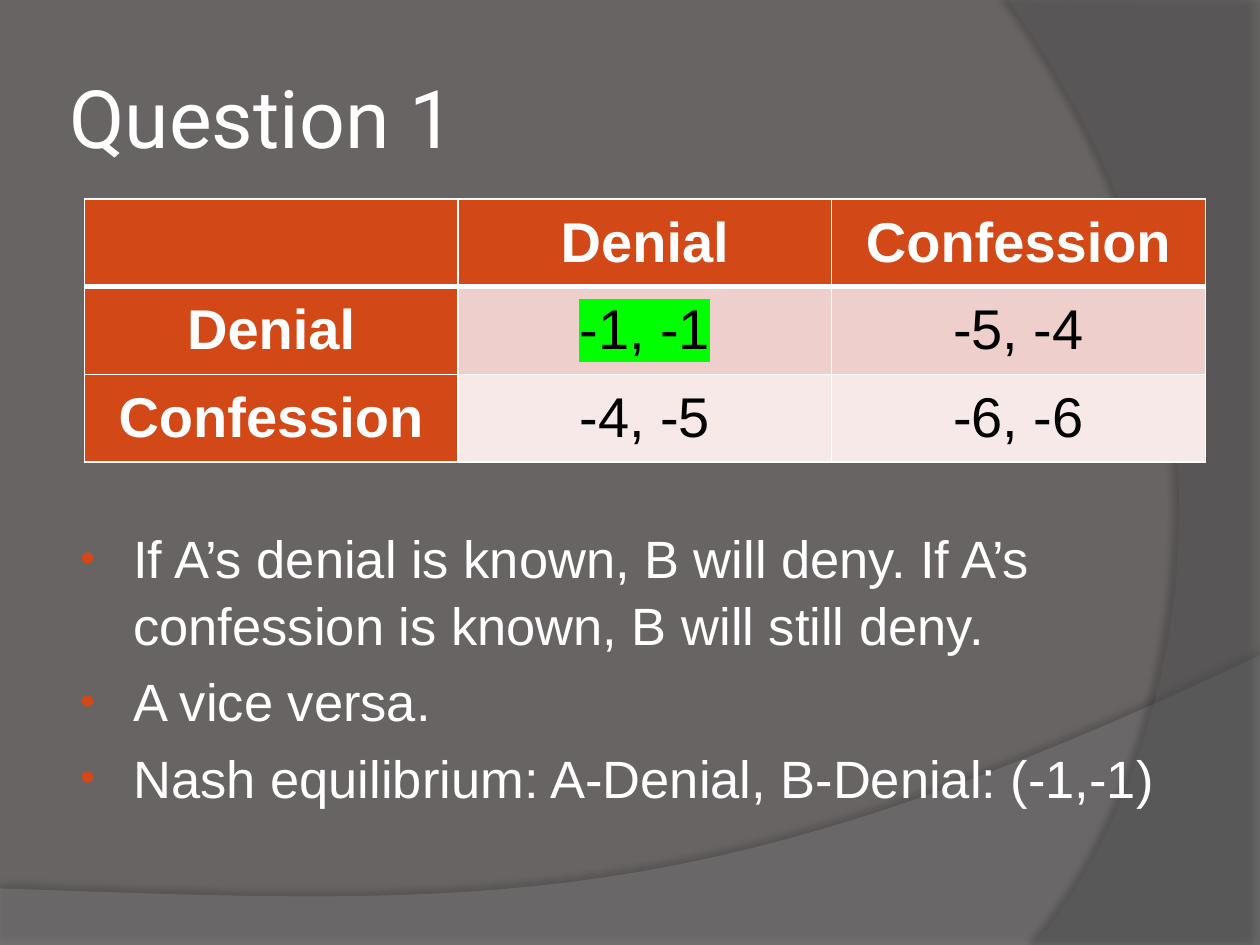
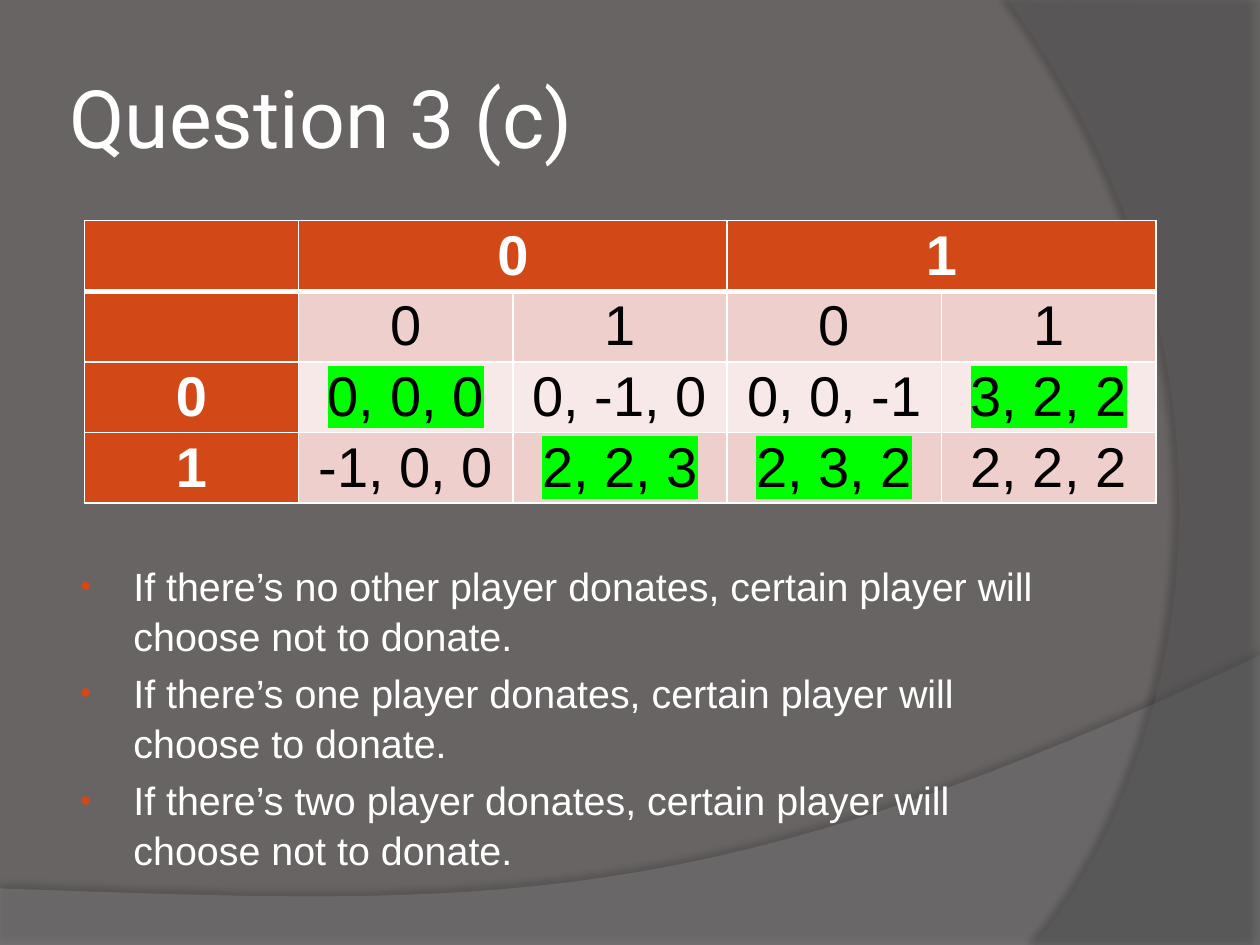
from lxml import etree
from pptx import Presentation
from pptx import util as u
from pptx.dml.color import RGBColor
from pptx.enum import text
from pptx.oxml.ns import qn

WHITE, BLACK, GREY = "FFFFFF", "000000", "696464"
ORANGE, GREEN = "D34817", "00FF00"
BANDS = ["F7E9E8", "EFCFCC"]
SLIDE_BOX = (0, 0, 25.4, 19.05)
TITLE_BOX = (1.27, 0.76, 20.75, 3.18)
CURVE_STEPS = 32


def rgb(hex_code):
    return RGBColor.from_string(hex_code)


def add_xml(parent, tag, **attrs):
    return etree.SubElement(parent, qn(tag), {k: str(v) for k, v in attrs.items()})


def place(sp, box):
    sp.left, sp.top, sp.width, sp.height = (u.Cm(v) for v in box)


def write(p, words, size=32, font="Arial", color=WHITE, bold=False,
          align=text.PP_ALIGN.LEFT, highlight=None):
    p.alignment = align
    r = p.add_run()
    r.text = words
    r.font.size, r.font.name, r.font.bold = u.Pt(size), font, bold
    r.font.color.rgb = rgb(color)
    if highlight:
        mark = etree.Element(qn("a:highlight"))
        add_xml(mark, "a:srgbClr", val=highlight)
        r.font._element.find(qn("a:solidFill")).addnext(mark)


def bezier(p0, p1, p2, p3):
    points = []
    for i in range(1, CURVE_STEPS + 1):
        t = i / CURVE_STEPS
        weights = ((1 - t) ** 3, 3 * t * (1 - t) ** 2, 3 * t * t * (1 - t), t ** 3)
        points.append(tuple(sum(w * v for w, v in zip(weights, axis))
                            for axis in zip(p0, p1, p2, p3)))
    return points


def swoosh(s, box, outline, color, opacity, shadow_opacity, distance, direction):
    left, top = box[:2]
    points = [(u.Cm(left + x), u.Cm(top + y)) for x, y in outline]
    builder = s.shapes.build_freeform(*points[0])
    builder.add_line_segments(points[1:], close=True)
    sp = builder.convert_to_shape()
    sp.line.fill.background()
    sp.fill.solid()
    sp.fill.fore_color.rgb = rgb(color)
    sp.shadow.inherit = False
    props = sp._element.spPr
    add_xml(props.find(qn("a:solidFill"))[0], "a:alpha", val=opacity * 1000)
    shadow = add_xml(props.find(qn("a:effectLst")), "a:outerShdw", blurRad=u.Pt(4),
                     dist=u.Pt(distance), dir=direction * 60000, rotWithShape=0)
    tint = add_xml(shadow, "a:srgbClr", val=BLACK)
    add_xml(tint, "a:alpha", val=shadow_opacity * 1000)


def backdrop(s, box):
    width, height = box[2:]
    wave = [(0, 17.91), (0, height), (width, height), (width, 13.21)]
    wave += bezier(wave[-1], (14.2, 18.52), (9.93, 18.26), wave[0])
    swoosh(s, box, wave, "7F7F7F", 45, 35, 3.5, 270)
    side = [(width, 0.05), (width, height), (20.85, height)]
    side += bezier(side[-1], (23.75, 15.72), (25.86, 7.62), (20.32, 0))
    swoosh(s, box, side, "5E5E5E", 40, 45, 4, 180)


def title(s, box, words):
    sp = s.shapes.title
    place(sp, box)
    tf = sp.text_frame
    tf.word_wrap = True
    tf.auto_size = text.MSO_AUTO_SIZE.NONE
    tf.vertical_anchor = text.MSO_ANCHOR.MIDDLE
    tf.margin_left = tf.margin_right = tf.margin_top = tf.margin_bottom = u.Cm(0.13)
    write(tf.paragraphs[0], words, size=46, font="Roboto")


def bullets(s, box, lines, size):
    tf = s.shapes.add_textbox(*(u.Cm(v) for v in box)).text_frame
    tf.word_wrap = True
    tf.margin_top = tf.margin_bottom = 0
    for i, line in enumerate(lines):
        p = tf.add_paragraph() if i else tf.paragraphs[0]
        p.line_spacing = 1.05
        p.space_after = u.Pt(size * 0.2)
        write(p, line, size=size)
        props = p._p.get_or_add_pPr()
        props.set("marL", str(u.Cm(1.17)))
        props.set("indent", str(u.Cm(-1.07)))
        add_xml(add_xml(props, "a:buClr"), "a:srgbClr", val=ORANGE)
        add_xml(props, "a:buSzPct", val=80000)
        add_xml(props, "a:buFont", typeface="Arial")
        add_xml(props, "a:buChar", char="•")


def cell_borders(cell, row):
    props = cell._tc.get_or_add_tcPr()
    widths = {"L": 1, "R": 1, "T": 3 if row == 1 else 1, "B": 3 if row == 0 else 1}
    for side, width in widths.items():
        ln = add_xml(props, f"a:ln{side}", w=u.Pt(width))
        add_xml(add_xml(ln, "a:solidFill"), "a:srgbClr", val=WHITE)


def payoff_table(s, box, rows, equilibria, merges=()):
    table = s.shapes.add_table(len(rows), len(rows[0]), *(u.Cm(v) for v in box)).table
    table.horz_banding = False
    for column in table.columns:
        column.width = u.Cm(box[2] / len(rows[0]))
    for row in table.rows:
        row.height = u.Cm(box[3] / len(rows))
    for first, last in merges:
        table.cell(0, first).merge(table.cell(0, last))
    for i, row in enumerate(rows):
        for j, words in enumerate(row):
            cell = table.cell(i, j)
            heading = i == 0 or j == 0
            cell_borders(cell, i)
            cell.fill.solid()
            cell.fill.fore_color.rgb = rgb(ORANGE if heading else BANDS[i % 2])
            cell.vertical_anchor = text.MSO_ANCHOR.MIDDLE
            cell.margin_left = cell.margin_right = u.Cm(0.18)
            cell.margin_top = cell.margin_bottom = 0
            if words:
                write(cell.text_frame.paragraphs[0], words, bold=heading,
                      color=WHITE if heading else BLACK, align=text.PP_ALIGN.CENTER,
                      highlight=GREEN if (i, j) in equilibria else None)


def question_slide(prs, heading, table, notes):
    s = prs.slides.add_slide(prs.slide_layouts[5])
    backdrop(s, SLIDE_BOX)
    title(s, TITLE_BOX, heading)
    bullets(s, **notes)
    payoff_table(s, **table)


def main():
    prs = Presentation()
    prs.slide_width, prs.slide_height = u.Cm(SLIDE_BOX[2]), u.Cm(SLIDE_BOX[3])
    fill = prs.slide_master.background.fill
    fill.solid()
    fill.fore_color.rgb = rgb(GREY)

    question_slide(
        prs, "Question 1",
        table=dict(
            box=(1.7, 4.01, 22.6, 5.31),
            rows=[["", "Denial", "Confession"],
                  ["Denial", "-1, -1", "-5, -4"],
                  ["Confession", "-4, -5", "-6, -6"]],
            equilibria={(1, 1)}),
        notes=dict(
            box=(1.27, 10.55, 23.04, 7.2), size=30,
            lines=["If A’s denial is known, B will deny. If A’s confession is known, "
                   "B will still deny.",
                   "A vice versa.",
                   "Nash equilibrium: A-Denial, B-Denial: (-1,-1)"]))

    question_slide(
        prs, "Question 3 (c)",
        table=dict(
            box=(1.7, 4.45, 21.6, 5.69),
            rows=[["", "0", "", "1", ""],
                  ["", "0", "1", "0", "1"],
                  ["0", "0, 0, 0", "0, -1, 0", "0, 0, -1", "3, 2, 2"],
                  ["1", "-1, 0, 0", "2, 2, 3", "2, 3, 2", "2, 2, 2"]],
            equilibria={(2, 1), (2, 4), (3, 2), (3, 3)},
            merges=[(1, 2), (3, 4)]),
        notes=dict(
            box=(1.27, 11.29, 20.75, 6.6), size=22.5,
            lines=["If there’s no other player donates, certain player will choose "
                   "not to donate.",
                   "If there’s one player donates, certain player will choose to donate.",
                   "If there’s two player donates, certain player will choose "
                   "not to donate."]))

    prs.save("out.pptx")


if __name__ == "__main__":
    main()
